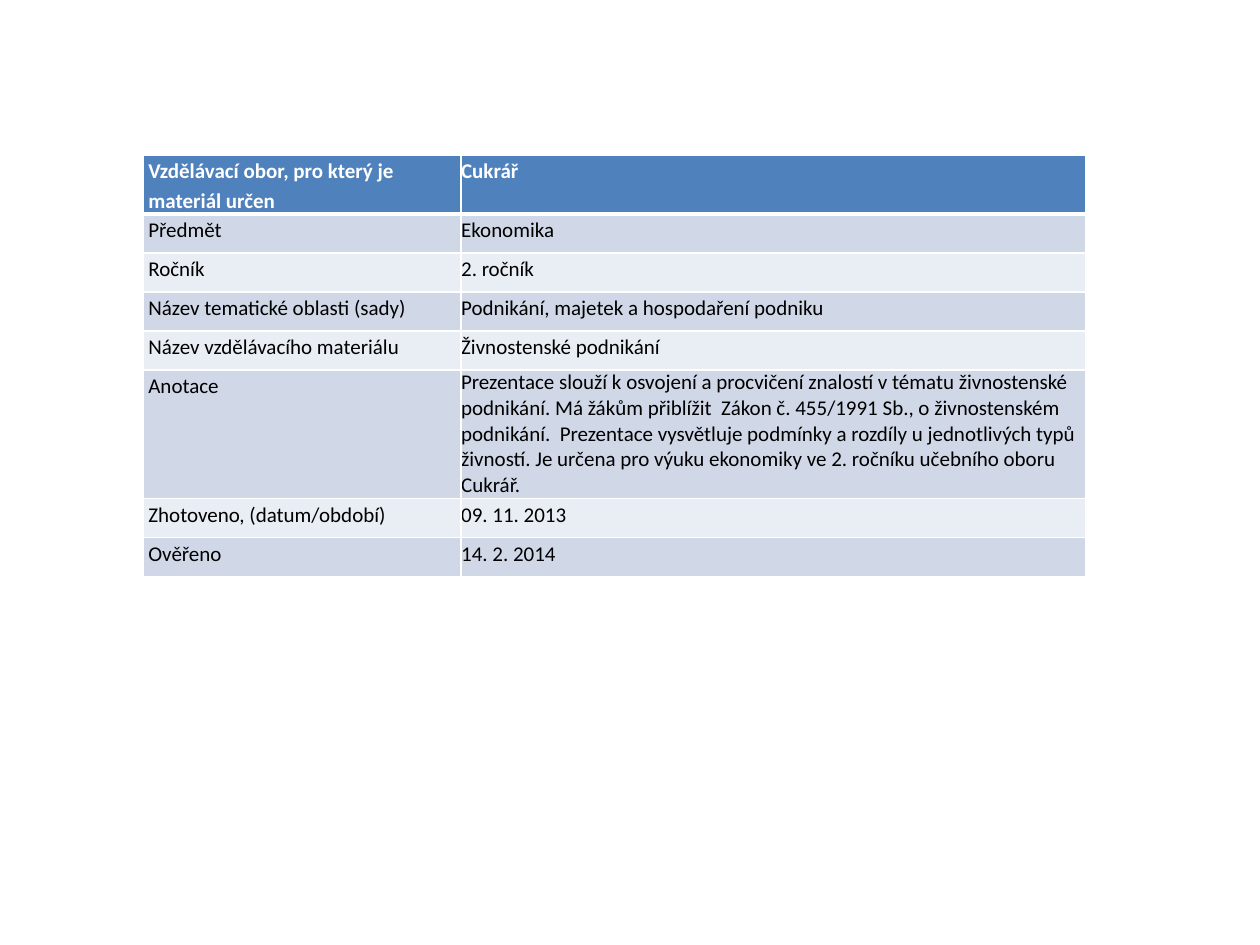
from lxml.etree import SubElement as Sub
from pptx import Presentation as Deck
from pptx.dml.color import RGBColor as Rgb
from pptx.oxml.ns import qn
from pptx.util import Inches as In, Pt

INK = {"head": "4F81BD", "odd": "D0D8E8", "even": "E9EDF4",
       "line": "FFFFFF", "light": "FFFFFF", "text": "000000"}
NOTE = ("Prezentace slouží k osvojení a procvičení znalostí v tématu živnostenské "
        "podnikání. Má žákům přiblížit  Zákon č. 455/1991 Sb., o živnostenském "
        "podnikání.  Prezentace vysvětluje podmínky a rozdíly u jednotlivých typů "
        "živností. Je určena pro výuku ekonomiky ve 2. ročníku učebního oboru  Cukrář.")
ROWS = [
    (" Vzdělávací obor, pro který je\n materiál určen", "Cukrář"),
    (" Předmět", "Ekonomika"),
    (" Ročník", "2. ročník"),
    (" Název tematické oblasti (sady)", "Podnikání, majetek a hospodaření podniku"),
    (" Název vzdělávacího materiálu", "Živnostenské podnikání"),
    (" Anotace", NOTE),
    (" Zhotoveno, (datum/období)", "09. 11. 2013"),
    (" Ověřeno", "14. 2. 2014"),
]
COLS = [2.52, 4.96]
TALL = {0: 0.46, 5: 1.02}


class Page:
    """Holds the slide and the style of its table."""

    def __init__(self, deck):
        self.slide = deck.slides.add_slide(deck.slide_layouts[6])
        self.font, self.size, self.lead = "Calibri", Pt(12), 1.15

    def edge(self, cell, side, width):
        props = cell._tc.get_or_add_tcPr()
        line = Sub(props, qn(f"a:ln{side}"), w=str(Pt(width)))
        fill = Sub(line, qn("a:solidFill"))
        Sub(fill, qn("a:srgbClr"), val=INK["line"])

    def cell(self, cell, text, row):
        head = row == 0
        for side in "LRTB":
            thick = (head and side == "B") or (row == 1 and side == "T")
            self.edge(cell, side, 3 if thick else 1)
        cell.fill.solid()
        tone = "head" if head else "odd" if row % 2 else "even"
        cell.fill.fore_color.rgb = Rgb.from_string(INK[tone])
        cell.margin_left = cell.margin_right = 0
        cell.margin_top = cell.margin_bottom = 0
        cell.text_frame.text = text
        for para in cell.text_frame.paragraphs:
            para.line_spacing = 1.0 if text == NOTE else self.lead
            for run in para.runs:
                font = run.font
                font.name, font.size, font.bold = self.font, self.size, head
                font.color.rgb = Rgb.from_string(INK["light" if head else "text"])

    def table(self, left, top, cols, rows):
        highs = [TALL.get(i, 0.31) for i in range(len(rows))]
        grid = self.slide.shapes.add_table(
            len(rows), len(cols), In(left), In(top), In(sum(cols)), In(sum(highs))).table
        for col, wide in zip(grid.columns, cols):
            col.width = In(wide)
        for i, (row, high) in enumerate(zip(grid.rows, highs)):
            row.height = In(high)
            for cell, text in zip(row.cells, rows[i]):
                self.cell(cell, text, i)


def main():
    deck = Deck()
    deck.slide_width, deck.slide_height = In(10), In(7.5)
    Page(deck).table(1.14, 1.23, COLS, ROWS)
    deck.save("out.pptx")


if __name__ == "__main__":
    main()
